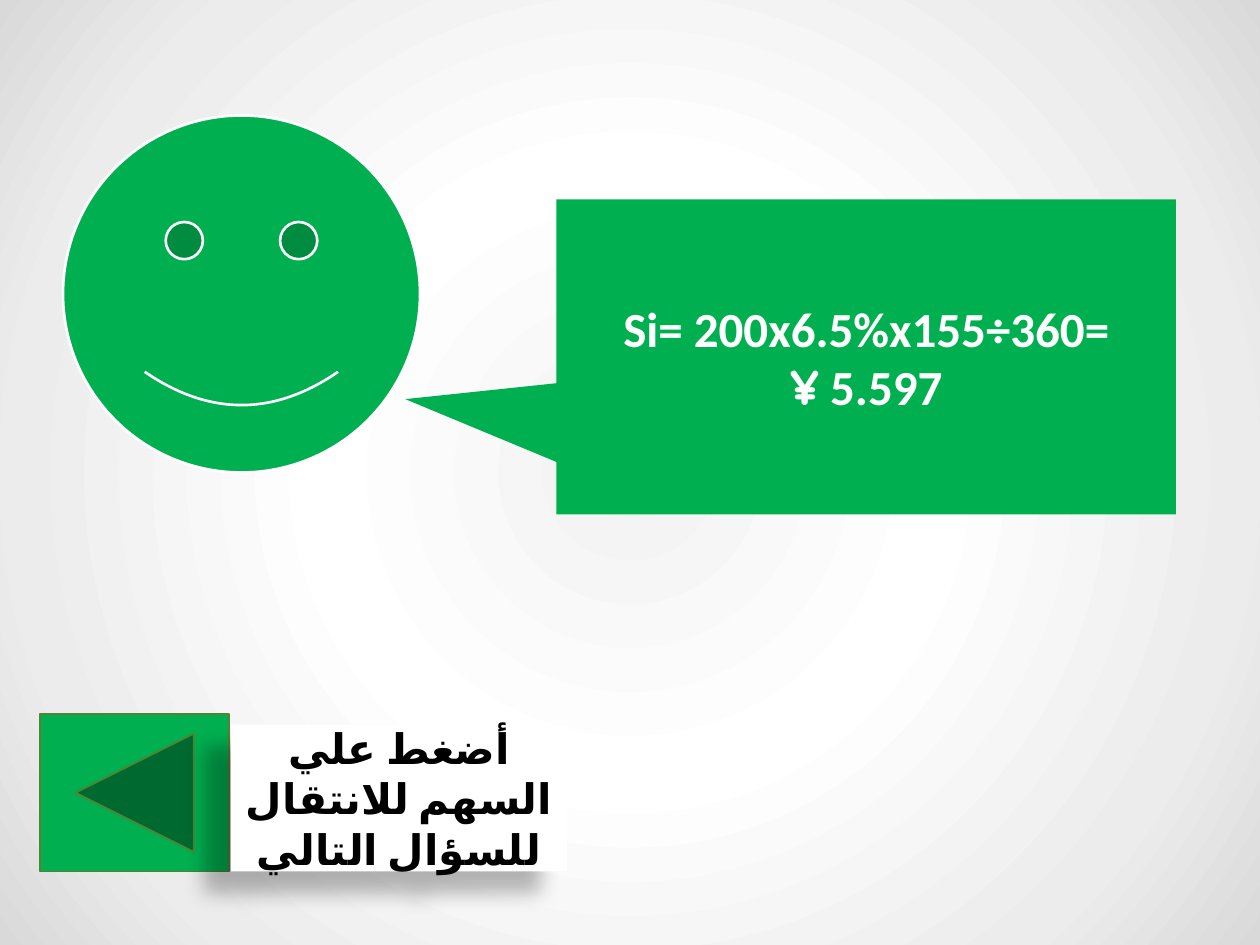
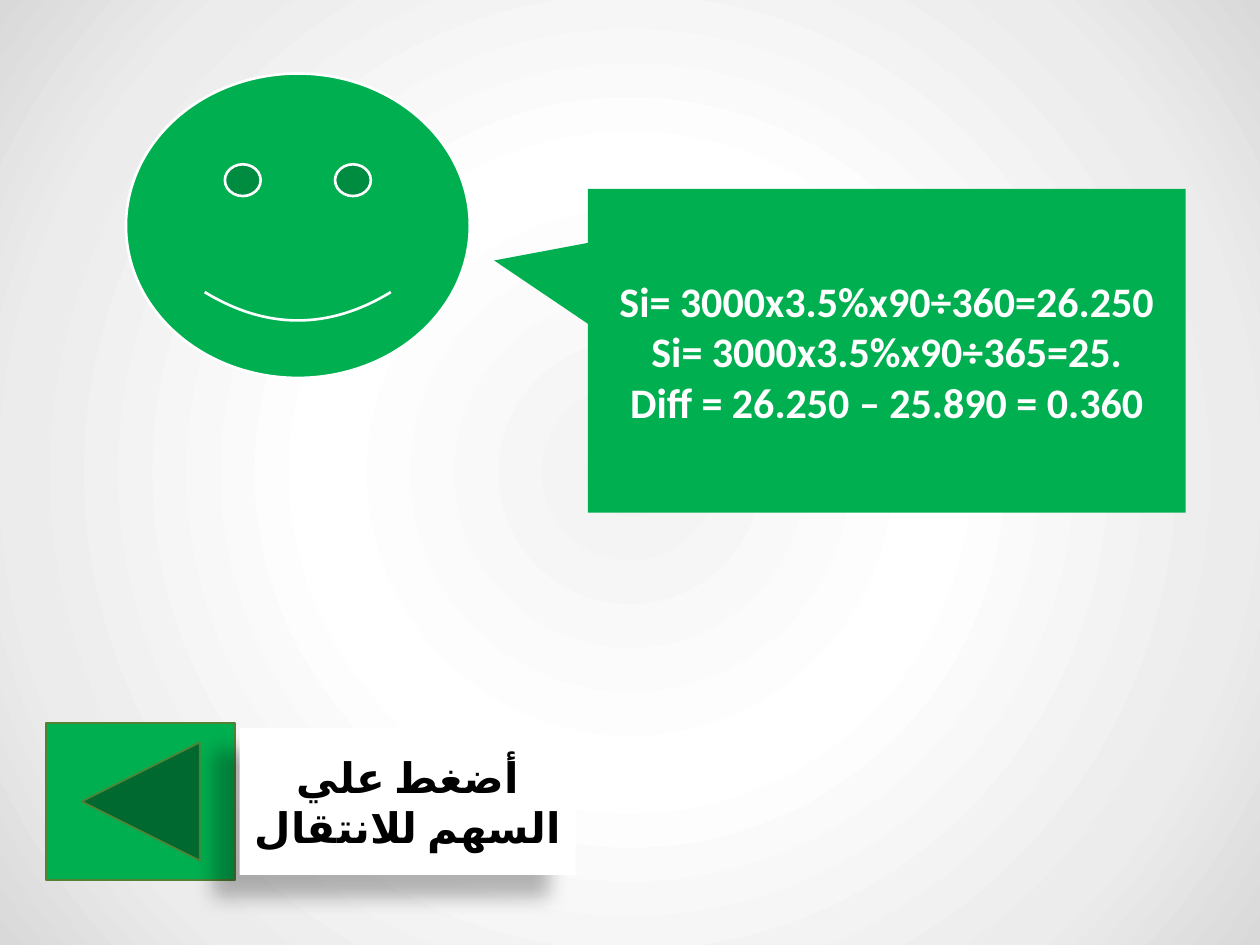
from lxml import etree
from pptx import Presentation
from pptx.dml.color import RGBColor
from pptx.enum.shapes import MSO_SHAPE
from pptx.enum.text import MSO_ANCHOR, PP_ALIGN
from pptx.oxml import parse_xml
from pptx.oxml.ns import nsdecls, qn
from pptx.util import Pt

CALLOUT = MSO_SHAPE.RECTANGULAR_CALLOUT
SMILEY = MSO_SHAPE.SMILEY_FACE
BACK = MSO_SHAPE.ACTION_BUTTON_BACK_OR_PREVIOUS
RECT = MSO_SHAPE.RECTANGLE
CENTER = PP_ALIGN.CENTER
MIDDLE = MSO_ANCHOR.MIDDLE

GREEN = RGBColor(0x00, 0xB0, 0x50)
OLIVE = RGBColor(0x54, 0x82, 0x35)
WHITE = RGBColor(0xFF, 0xFF, 0xFF)
BLACK = RGBColor(0x00, 0x00, 0x00)

FONT = "Calibri"
YEN_FONT = "Quicksand"
STOPS = [(0, "F2F2F2"), (39, "FFFFFF"), (78, "ECECEC"), (100, "D9D9D9")]

# Each box is left, top, width, height in points
PAGES = [
    {
        "bubble": (318, 114, 354, 180), "tail": (-0.744, 0.134), "size": 28,
        "sums": [["Si= 200x6.5%x155÷360="], ["¥", " 5.597"]],
        "face": (36, 66, 204, 204),
        "button": (23, 408, 108, 90),
        "label": (132, 414, 192, 84),
        "hint": "أضغط علي السهم للانتقال للسؤال التالي",
    },
    {
        "bubble": (336, 108, 341.5, 185), "tail": (-0.657, -0.279), "size": 24,
        "sums": [["Si= 3000x3.5%x90÷360=26.250"],
                 ["Si= 3000x3.5%x90÷365=25."],
                 ["Diff = 26.250 – 25.890 = 0.360"]],
        "face": (72, 42, 196.5, 174),
        "button": (26.5, 413, 108, 90),
        "label": (137, 416, 192, 84),
        "hint": "أضغط علي السهم للانتقال",
    },
]


def draw(slide, kind, box, fill, line=None, width=1):
    shape = slide.shapes.add_shape(kind, *[Pt(n) for n in box])
    shape.shadow.inherit = False
    shape.fill.solid()
    shape.fill.fore_color.rgb = fill
    if line is None:
        shape.line.fill.background()
    else:
        shape.line.color.rgb = line
        shape.line.width = Pt(width)
    return shape


def write(shape, lines, size, color):
    """Fill the shape with centred bold lines, each a list of run texts."""
    frame = shape.text_frame
    frame.word_wrap = True
    frame.vertical_anchor = MIDDLE
    for i, parts in enumerate(lines):
        para = frame.add_paragraph() if i else frame.paragraphs[0]
        para.alignment = CENTER
        for part in parts:
            run = para.add_run()
            run.text = part
            run.font.name = YEN_FONT if part == "¥" else FONT
            run.font.size = Pt(size)
            run.font.bold = True
            run.font.color.rgb = color


prs = Presentation()
prs.slide_width, prs.slide_height = Pt(720), Pt(540)

# Shared radial background on the master
stops = "".join(
    f'<a:gs pos="{pos * 1000}"><a:srgbClr val="{rgb}"/></a:gs>' for pos, rgb in STOPS)
master = prs.slide_master
master.background.fill.solid()
props = master.element.cSld.find(qn("p:bg")).find(qn("p:bgPr"))
props.replace(props[0], parse_xml(
    f'<a:gradFill {nsdecls("a")} rotWithShape="1"><a:gsLst>{stops}</a:gsLst>'
    '<a:path path="circle"><a:fillToRect l="50000" t="50000" r="50000" b="50000"/>'
    '</a:path></a:gradFill>'))

for page in PAGES:
    slide = prs.slides.add_slide(prs.slide_layouts[6])

    bubble = draw(slide, CALLOUT, page["bubble"], GREEN)
    bubble.adjustments[0], bubble.adjustments[1] = page["tail"]
    write(bubble, page["sums"], page["size"], WHITE)
    for para in bubble.text_frame.paragraphs:
        indent = para._p.get_or_add_pPr()
        indent.set("marL", str(Pt(27)))
        indent.set("indent", str(Pt(-27)))

    draw(slide, SMILEY, page["face"], GREEN, WHITE, 1.5)
    draw(slide, BACK, page["button"], GREEN, OLIVE)

    label = draw(slide, RECT, page["label"], WHITE)
    write(label, [[page["hint"]]], 24, BLACK)
    para = label.text_frame.paragraphs[0]
    para._p.get_or_add_pPr().set("rtl", "1")
    style = para.runs[0].font._element
    style.set("lang", "ar-EG")
    etree.SubElement(style, qn("a:cs")).set("typeface", FONT)

    effects = label._element.spPr.find(qn("a:effectLst"))
    effects.append(parse_xml(
        f'<a:outerShdw {nsdecls("a")} blurRad="{Pt(11.8)}" dist="{Pt(19.7)}" '
        f'dir="{141 * 60000}" algn="tr" rotWithShape="0">'
        '<a:srgbClr val="000000"><a:alpha val="28000"/></a:srgbClr></a:outerShdw>'))

prs.save("out.pptx")
